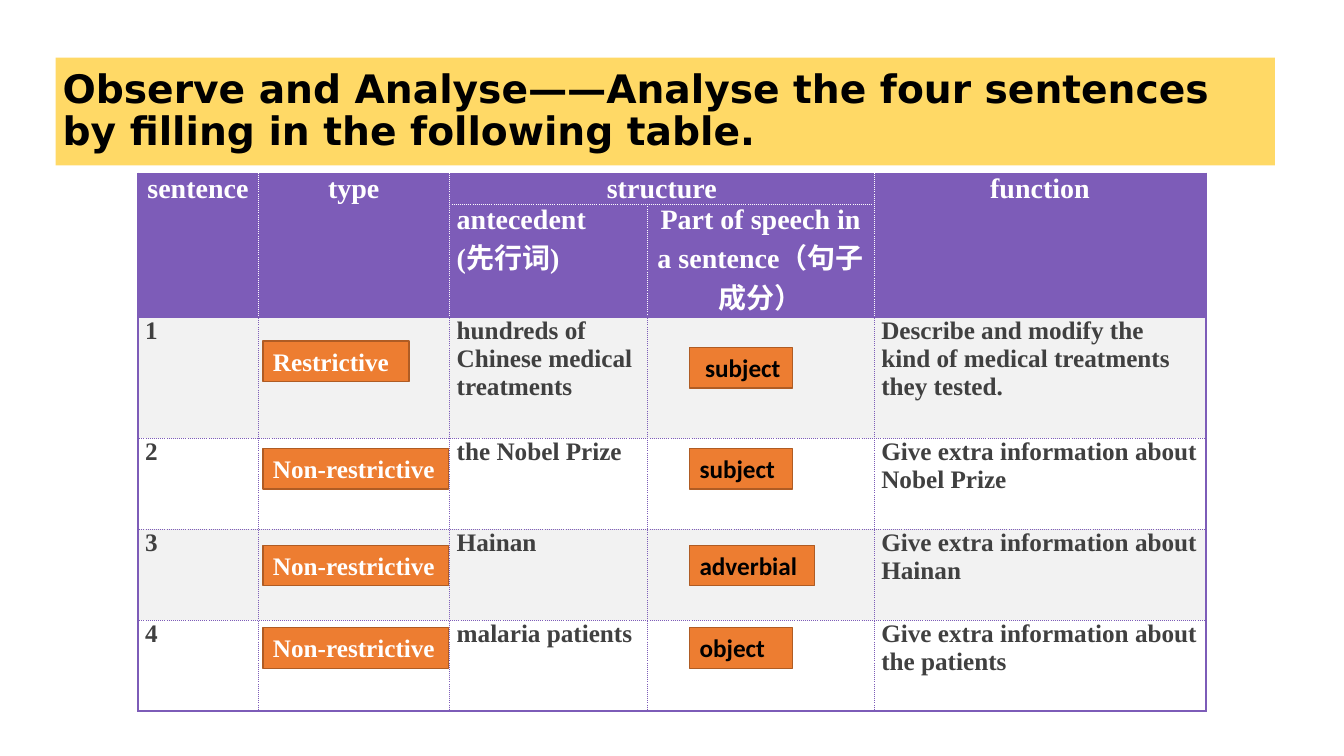
from dataclasses import dataclass

from lxml.etree import SubElement
from pptx import Presentation
from pptx.dml.color import RGBColor as RGB
from pptx.enum.shapes import MSO_SHAPE as SHAPE
from pptx.enum.text import MSO_ANCHOR as ANCHOR, MSO_AUTO_SIZE as AUTO, PP_ALIGN as ALIGN
from pptx.oxml.ns import qn
from pptx.util import Cm, Pt


@dataclass(frozen=True)
class Theme:
    """Colours, fonts and type sizes of the slide."""
    banner: str = "FFD966"
    purple: str = "7D5CB8"
    orange: str = "ED7D31"
    orange_line: str = "AF5C24"
    band: str = "F2F2F2"
    white: str = "FFFFFF"
    black: str = "000000"
    grey: str = "404040"
    title_font: str = "DejaVu Sans"
    table_font: str = "Times New Roman"
    tag_font: str = "Calibri"
    title_size: int = 28
    head_size: int = 20
    body_size: int = 18


T = Theme()
COLS = [3.02, 4.83, 4.98, 5.72, 8.36]
ROWS = [0.76, 2.11, 3.05, 2.29, 2.29, 2.29]
HEAD_ROWS = 2
HEADS = [
    (0, 0, 1, 0, ["sentence"], ALIGN.CENTER),
    (0, 1, 1, 1, ["type"], ALIGN.CENTER),
    (0, 2, 0, 3, ["structure"], ALIGN.CENTER),
    (0, 4, 1, 4, ["function"], ALIGN.CENTER),
    (1, 2, 1, 2, ["antecedent", "(先行词)"], ALIGN.LEFT),
    (1, 3, 1, 3, ["Part of speech in a sentence（句子成分）"], ALIGN.CENTER),
]
SENTENCES = [
    ("hundreds of Chinese medical treatments",
     "Describe and modify the kind of medical treatments they tested."),
    ("the Nobel Prize", "Give extra information about Nobel Prize"),
    ("Hainan", "Give extra information about Hainan"),
    ("malaria patients", "Give extra information about the patients"),
]
TYPES = [("Restrictive", 4.22, 3.68, 0), ("Non-restrictive", 6.93, 4.67, 0),
         ("Non-restrictive", 9.37, 4.67, 0), ("Non-restrictive", 11.45, 4.67, 0)]
PARTS = [("subject", 4.39, 2.59, 0.14), ("subject", 6.93, 2.59, 0),
         ("adverbial", 9.37, 3.15, 0), ("object", 11.45, 2.59, 0)]


def add_run(p, text, font, size, color):
    """Add one bold run to a paragraph."""
    r = p.add_run()
    r.text = text
    r.font.name, r.font.size, r.font.bold = font, Pt(size), True
    r.font.color.rgb = RGB.from_string(color)


def add_box(s, x, y, w, h, fill, line=None):
    """Add a flat rectangle, outlined if a line colour is given."""
    sp = s.shapes.add_shape(SHAPE.RECTANGLE, Cm(x), Cm(y), Cm(w), Cm(h))
    sp.shadow.inherit = False
    sp.fill.solid()
    sp.fill.fore_color.rgb = RGB.from_string(fill)
    if line:
        sp.line.color.rgb = RGB.from_string(line)
        sp.line.width = Pt(1)
    else:
        sp.line.fill.background()
    sp.text_frame.word_wrap = True
    sp.text_frame.paragraphs[0].alignment = ALIGN.LEFT
    return sp


def add_title(s, x, y, w, h):
    """Place the title banner."""
    tf = add_box(s, x, y, w, h, T.banner).text_frame
    tf.vertical_anchor = ANCHOR.MIDDLE
    tf.margin_left = tf.margin_right = Cm(0.18)
    tf.margin_top = tf.margin_bottom = Cm(0.1)
    p = tf.paragraphs[0]
    p.line_spacing = 0.9
    add_run(p, "Observe and Analyse——Analyse the four sentences by filling in the following table.",
            T.title_font, T.title_size, T.black)


def set_borders(cell, row, col):
    """Draw heavy outer and header edges and dotted inner ones."""
    last_row = row + cell.span_height
    last_col = col + cell.span_width
    heavy = {
        "lnL": col == 0,
        "lnR": last_col == len(COLS),
        "lnT": row in (0, HEAD_ROWS),
        "lnB": last_row in (HEAD_ROWS, len(ROWS)),
    }
    tc_pr = cell._tc.get_or_add_tcPr()
    for side, is_heavy in heavy.items():
        ln = SubElement(tc_pr, qn(f"a:{side}"), w=str(Pt(1.5 if is_heavy else 0.25)))
        color = T.white if row < HEAD_ROWS and not is_heavy else T.purple
        SubElement(SubElement(ln, qn("a:solidFill")), qn("a:srgbClr"), val=color)
        SubElement(ln, qn("a:prstDash"), val="solid" if is_heavy else "dot")


def fill_cell(cell, lines, size, color, align=ALIGN.LEFT):
    """Write one paragraph per line in a cell."""
    tf = cell.text_frame
    for i, line in enumerate(lines):
        p = tf.add_paragraph() if i else tf.paragraphs[0]
        p.alignment = align
        add_run(p, line, T.table_font, size, color)


def add_grid(s, x, y):
    """Place the table of sentences."""
    table = s.shapes.add_table(len(ROWS), len(COLS), Cm(x), Cm(y),
                               Cm(sum(COLS)), Cm(sum(ROWS))).table
    for column, width in zip(table.columns, COLS):
        column.width = Cm(width)
    for row, height in zip(table.rows, ROWS):
        row.height = Cm(height)
    for top, left, bottom, right, lines, align in HEADS:
        cell = table.cell(top, left)
        if (top, left) != (bottom, right):
            cell.merge(table.cell(bottom, right))
        fill_cell(cell, lines, T.head_size, T.white, align)
    for i, (antecedent, function) in enumerate(SENTENCES):
        for col, text in ((0, str(i + 1)), (2, antecedent), (4, function)):
            fill_cell(table.cell(HEAD_ROWS + i, col), [text], T.body_size, T.grey)
    for row in range(len(ROWS)):
        band = T.purple if row < HEAD_ROWS else (T.band, T.white)[row % 2]
        for col in range(len(COLS)):
            cell = table.cell(row, col)
            cell.margin_left = cell.margin_right = Cm(0.18)
            cell.margin_top = cell.margin_bottom = 0
            if not cell.is_spanned:
                set_borders(cell, row, col)
            cell.fill.solid()
            cell.fill.fore_color.rgb = RGB.from_string(band)


def add_tags(s, x, y, tags, font, color):
    """Place a column of answer tags below the table top."""
    for text, offset, width, indent in tags:
        tf = add_box(s, x, y + offset, width, 1.02, T.orange, T.orange_line).text_frame
        tf.auto_size = AUTO.SHAPE_TO_FIT_TEXT
        tf.vertical_anchor = ANCHOR.TOP
        tf.margin_left = Cm(0.25 + indent)
        add_run(tf.paragraphs[0], text, font, T.body_size, color)


def add_analysis(s, x, y):
    """Place the table with its answer tags."""
    add_grid(s, x, y)
    add_tags(s, x + sum(COLS[:1]) + 0.13, y, TYPES, T.table_font, T.white)
    add_tags(s, x + sum(COLS[:3]) + 1.07, y, PARTS, T.tag_font, T.black)


def main():
    """Build and save the slide."""
    prs = Presentation()
    prs.slide_width, prs.slide_height = Cm(33.87), Cm(19.05)
    s = prs.slides.add_slide(prs.slide_layouts[6])
    add_title(s, 1.4, 1.45, 30.73, 2.72)
    add_analysis(s, 3.48, 4.37)
    prs.save("out.pptx")


if __name__ == "__main__":
    main()
